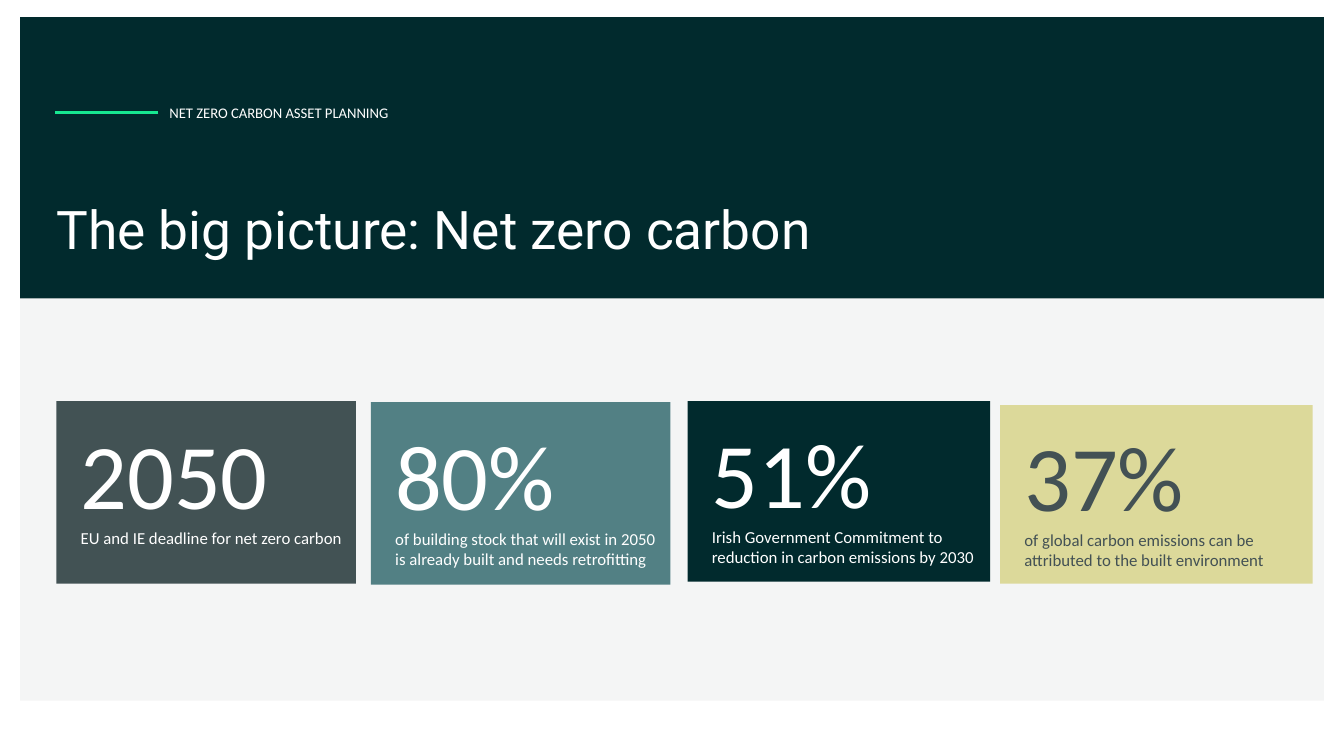
from pptx import Presentation
from pptx.dml.color import RGBColor
from pptx.enum.shapes import MSO_CONNECTOR as Conn, MSO_SHAPE as Form
from pptx.enum.text import MSO_ANCHOR as Anchor, MSO_AUTO_SIZE as Auto, PP_ALIGN as Align
from pptx.oxml.ns import qn
from pptx.util import Inches, Pt
from lxml.etree import SubElement as Sub

COLS, ROWS = 133.3, 75
CELL = Inches(0.1)
DARK, WHITE = "012A2D", "FFFFFF"
LEFT, WIDE = 2, 129.3
CARDS = [
    ((5.6, 39.8, 29.7, 18.1), "425254", WHITE, "2050",
     "EU and IE deadline for net zero carbon", 1),
    ((36.8, 39.9, 29.7, 18.1), "528084", WHITE, "80%",
     "of building stock that will exist in 2050 is already built and needs retrofitting", 2),
    ((68.2, 39.8, 30, 17.9), DARK, WHITE, "51%",
     "Irish Government Commitment to reduction in carbon emissions by 2030", 2),
    ((99.2, 40.2, 31, 17.7), "DCD99A", "435154", "37%",
     "of global carbon emissions can be attributed to the built environment", 2),
]


def grid(*cells):
    return [int(n * CELL) for n in cells]


def paint(color, code):
    color.rgb = RGBColor.from_string(code)


def style(para, font, size, code):
    para.alignment = Align.LEFT
    for run in para.runs:
        run.font.name = font
        run.font.size = Pt(size)
        paint(run.font.color, code)


def inset(frame, *sides):
    (frame.margin_left, frame.margin_top,
     frame.margin_right, frame.margin_bottom) = grid(*sides)


def panel(slide, box, code, alpha=None):
    shape = slide.shapes.add_shape(Form.RECTANGLE, *grid(*box))
    shape.shadow.inherit = False
    shape.line.fill.background()
    shape.fill.solid()
    paint(shape.fill.fore_color, code)
    if alpha:
        tone = shape.fill._xPr.find(qn("a:solidFill"))[0]
        Sub(tone, qn("a:alpha"), val=str(alpha * 1000))
    return shape


def card(slide, box, fill, ink, figure, note, lines):
    frame = panel(slide, box, fill).text_frame
    frame.word_wrap = True
    frame.vertical_anchor = Anchor.MIDDLE
    inset(frame, 2.4, 2, 1.2, 2 + 2 * (2 - lines))
    frame.text = f"{figure}\n{note}"
    for para, size in zip(frame.paragraphs, (66, 12)):
        style(para, "Calibri", size, ink)


def rule(slide, ends, code, width):
    line = slide.shapes.add_connector(Conn.STRAIGHT, *grid(*ends))
    paint(line.line.color, code)
    line.line.width = Pt(width)
    Sub(line._element.spPr, qn("a:effectLst"))


def label(slide, hold, box, text, font, size, lead, gap):
    hold.left, hold.top, hold.width, hold.height = grid(*box)
    frame = hold.text_frame
    frame.text = text
    frame.word_wrap = True
    frame.auto_size = Auto.NONE
    frame.vertical_anchor = Anchor.TOP
    inset(frame, 0, 0, 0, 0)
    para = frame.paragraphs[0]
    style(para, font, size, WHITE)
    para.line_spacing = lead
    para.space_before = para.space_after = Pt(gap)
    props = para._p.get_or_add_pPr()
    props.set("marL", "0")
    props.set("indent", "0")
    Sub(props, qn("a:buNone"))
    slide.shapes._spTree.append(hold._element)


def main():
    deck = Presentation()
    deck.slide_width, deck.slide_height = grid(COLS, ROWS)
    slide = deck.slides.add_slide(deck.slide_layouts[1])
    title, body = slide.placeholders
    panel(slide, (LEFT, 1.7, WIDE, 27.9), DARK)
    rule(slide, (15.7, 11.2, 5.5, 11.2), "17E891", 2)
    panel(slide, (LEFT, 29.6, WIDE, 39.9), "7F8480", 8)
    for item in CARDS:
        card(slide, *item)
    label(slide, body, (16.8, 10.5, 32, 3), "NET ZERO CARBON ASSET PLANNING",
          "Calibri", 10.5, 0.9, 0)
    label(slide, title, (5.6, 17.5, 122.2, 20), "The big picture: Net zero carbon",
          "Roboto", 38, Pt(60), 12)
    deck.save("out.pptx")


if __name__ == "__main__":
    main()
